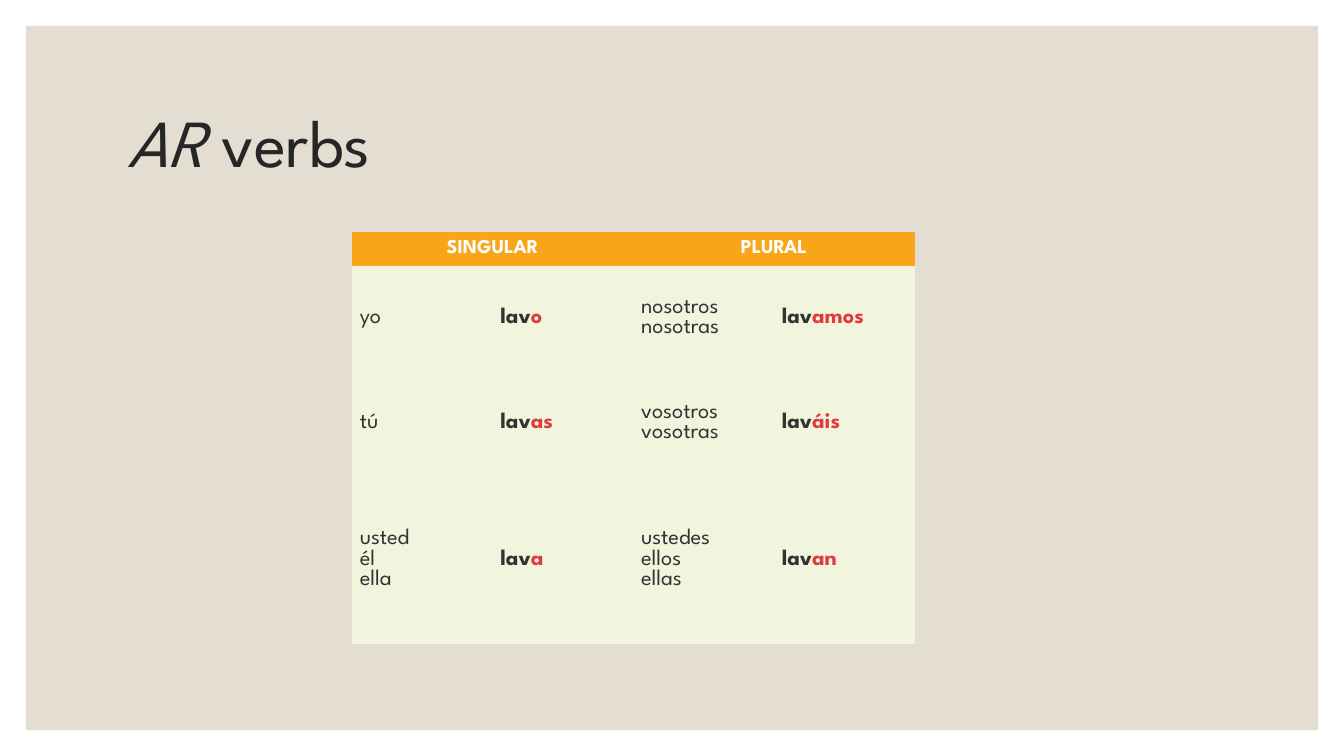
from dataclasses import dataclass

from pptx import Presentation
from pptx.dml.color import RGBColor
from pptx.enum import shapes, text
from pptx.util import Pt


@dataclass(frozen=True)
class Theme:
    font: str = "League Spartan"
    panel: RGBColor = RGBColor.from_string("E3DED1")
    title: RGBColor = RGBColor.from_string("262626")
    header: RGBColor = RGBColor.from_string("F9A51A")
    header_text: RGBColor = RGBColor.from_string("FFFFFF")
    body: RGBColor = RGBColor.from_string("F1F5DD")
    body_text: RGBColor = RGBColor.from_string("333333")
    ending: RGBColor = RGBColor.from_string("E03C3F")
    title_size: int = 48
    header_size: int = 14
    body_size: int = 16


THEME = Theme()
SLIDE_WIDTH, SLIDE_HEIGHT = 960, 540
MARGIN = 18.5
COLUMN_WIDTH = 100.5
ROW_HEIGHTS = [24.3, 75, 75, 120]
HEADINGS = ["SINGULAR", "PLURAL"]
STEM = "lav"
# Each row holds (pronouns, ending) for the singular and the plural.
CONJUGATION = [
    [("yo", "o"), ("nosotros\nnosotras", "amos")],
    [("tú", "as"), ("vosotros\nvosotras", "áis")],
    [("usted\nél\nella", "a"), ("ustedes\nellos\nellas", "an")],
]


def set_font(font, size, color, bold=False):
    font.name = THEME.font
    font.size = Pt(size)
    font.color.rgb = color
    font.bold = bold


def add_panel(slide):
    """Lay the coloured panel behind everything else on the slide."""
    panel = slide.shapes.add_shape(
        shapes.MSO_SHAPE.RECTANGLE, Pt(MARGIN), Pt(MARGIN),
        Pt(SLIDE_WIDTH - 2 * MARGIN), Pt(SLIDE_HEIGHT - 2 * MARGIN))
    panel.shadow.inherit = False
    panel.fill.solid()
    panel.fill.fore_color.rgb = THEME.panel
    panel.line.fill.background()
    slide.shapes.element.insert(2, panel.element)


def fill_title(title, italic_part, plain_part):
    title.left, title.top, title.width, title.height = Pt(84), Pt(50.4), Pt(792), Pt(108)
    title.text_frame.vertical_anchor = text.MSO_ANCHOR.MIDDLE
    heading = title.text_frame.paragraphs[0]
    heading.alignment = text.PP_ALIGN.LEFT
    heading.line_spacing = 0.9
    set_font(heading.font, THEME.title_size, THEME.title)
    for part, italic in [(italic_part, True), (plain_part, False)]:
        run = heading.add_run()
        run.text = part
        run.font.italic = italic


def format_cell(cell, fill, side_inset, end_inset):
    cell.fill.solid()
    cell.fill.fore_color.rgb = fill
    cell.vertical_anchor = text.MSO_ANCHOR.MIDDLE
    cell.margin_left = cell.margin_right = Pt(side_inset)
    cell.margin_top = cell.margin_bottom = Pt(end_inset)
    return cell.text_frame.paragraphs[0]


def fill_heading(table, column, heading):
    cell = table.cell(0, column)
    cell.merge(table.cell(0, column + 1))
    label = format_cell(cell, THEME.header, 3.6, 2)
    label.text = heading
    label.alignment = text.PP_ALIGN.CENTER
    set_font(label.font, THEME.header_size, THEME.header_text, bold=True)


def fill_pronouns(cell, pronouns):
    label = format_cell(cell, THEME.body, 5.6, 2.8)
    label.text = pronouns
    set_font(label.font, THEME.body_size, THEME.body_text)


def fill_verb(cell, ending):
    verb = format_cell(cell, THEME.body, 5.6, 2.8)
    set_font(verb.font, THEME.body_size, THEME.body_text, bold=True)
    verb.add_run().text = STEM
    suffix = verb.add_run()
    suffix.text = ending
    suffix.font.color.rgb = THEME.ending


def add_conjugation_table(slide):
    column_count = 2 * len(HEADINGS)
    table = slide.shapes.add_table(
        len(ROW_HEIGHTS), column_count, Pt(251.4), Pt(165.6),
        Pt(column_count * COLUMN_WIDTH), Pt(sum(ROW_HEIGHTS))).table
    table.first_row = table.horz_banding = False
    # The plain "No Style, No Grid" table style leaves the cells without borders.
    table_style = table._tbl.tblPr[0]
    table_style.text = "{2D5ABB26-0587-4C30-8999-92F81FD0307C}"
    for row, height in zip(table.rows, ROW_HEIGHTS):
        row.height = Pt(height)
    for number, heading in enumerate(HEADINGS):
        fill_heading(table, 2 * number, heading)
    for row, forms in enumerate(CONJUGATION, start=1):
        for number, (pronouns, ending) in enumerate(forms):
            fill_pronouns(table.cell(row, 2 * number), pronouns)
            fill_verb(table.cell(row, 2 * number + 1), ending)


def main():
    deck = Presentation()
    deck.slide_width, deck.slide_height = Pt(SLIDE_WIDTH), Pt(SLIDE_HEIGHT)
    slide = deck.slides.add_slide(deck.slide_layouts.get_by_name("Title Only"))
    add_panel(slide)
    fill_title(slide.shapes.title, "AR", " verbs")
    add_conjugation_table(slide)
    deck.save("out.pptx")


if __name__ == "__main__":
    main()
